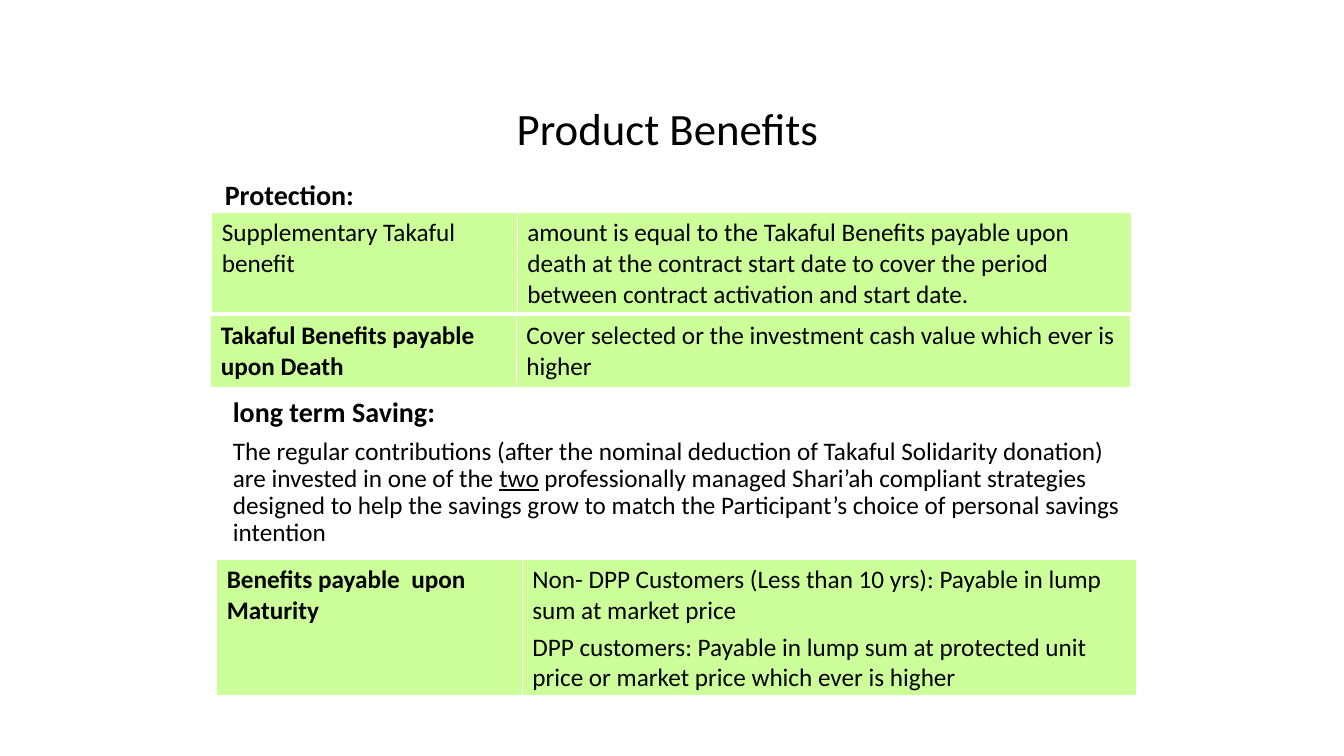
from lxml import etree
from pptx import Presentation
from pptx.dml import color
from pptx.enum import text
from pptx.oxml import ns
from pptx.util import Inches, Pt

BLACK, WHITE, LIME = "000000", "FFFFFF", "CCFF99"
BORDERS = {"lnL": 1, "lnR": 1, "lnT": 1, "lnB": 3}
COLUMNS = (3.03, 6.09)


def rgb(value):
    return color.RGBColor.from_string(value)


def set_attributes(target, values):
    for name, value in values.items():
        setattr(target, name, value)


def add_run(paragraph, wording, size=18, **extra):
    run = paragraph.add_run()
    run.text = wording
    set_attributes(run.font, {"name": "Calibri", "size": Pt(size), **extra})
    run.font.color.rgb = rgb(BLACK)


def add_words(slide, box, runs, inset=0.1, **paragraph_format):
    frame = slide.shapes.add_textbox(*map(Inches, box)).text_frame
    set_attributes(frame, {
        "word_wrap": True,
        "vertical_anchor": text.MSO_ANCHOR.TOP,
        "margin_left": Inches(inset),
    })
    paragraph = frame.paragraphs[0]
    set_attributes(paragraph, paragraph_format)
    for wording, font in runs:
        add_run(paragraph, wording, **font)


def add_borders(cell):
    properties = cell._tc.get_or_add_tcPr()
    for side, width in BORDERS.items():
        line = etree.SubElement(properties, ns.qn(f"a:{side}"), w=str(Pt(width)))
        fill = etree.SubElement(line, ns.qn("a:solidFill"))
        etree.SubElement(fill, ns.qn("a:srgbClr"), val=WHITE)


def fill_cell(cell, wordings, bold):
    add_borders(cell)
    cell.fill.solid()
    cell.fill.fore_color.rgb = rgb(LIME)
    frame = cell.text_frame
    for index, wording in enumerate(wordings):
        paragraph = frame.add_paragraph() if index else frame.paragraphs[0]
        if index:
            paragraph.space_before = Pt(4.3)
        add_run(paragraph, wording, bold=bold)


def add_benefit(slide, left, top, height, benefit, details, bold=True):
    box = map(Inches, (left, top, sum(COLUMNS), height))
    table = slide.shapes.add_table(1, len(COLUMNS), *box).table
    set_attributes(table, {"first_row": False, "horz_banding": False})
    for column, width in zip(table.columns, COLUMNS):
        column.width = Inches(width)
    fill_cell(table.cell(0, 0), [benefit], bold)
    fill_cell(table.cell(0, 1), details, False)


def add_heading(slide, left, top, wording, inset):
    add_words(slide, (left, top, 9.2, 0.41),
              [(wording, {"size": 20, "bold": True})], inset)


def main():
    deck = Presentation()
    set_attributes(deck, {"slide_width": Inches(13.33), "slide_height": Inches(7.5)})
    slide = deck.slides.add_slide(deck.slide_layouts[6])

    add_words(slide, (2.26, 0.95, 8.72, 0.54),
              [("Product Benefits", {"size": 32})],
              alignment=text.PP_ALIGN.CENTER)

    add_heading(slide, 2.02, 1.71, "Protection:", 0.21)
    add_benefit(slide, 2.1, 2.11, 1, "Supplementary Takaful benefit", [
        "amount is equal to the Takaful Benefits payable upon death at the "
        "contract start date to cover the period between contract activation "
        "and start date."], bold=False)
    add_benefit(slide, 2.09, 3.13, 0.73, "Takaful Benefits payable upon Death", [
        "Cover selected or the investment cash value which ever is higher"])

    add_heading(slide, 2.15, 3.86, "long term Saving:", 0.16)
    add_words(slide, (2.15, 4.3, 9.12, 1.19), [
        ("The regular contributions (after the nominal deduction of Takaful "
         "Solidarity donation) are invested in one of the ", {}),
        ("two", {"underline": True}),
        (" professionally managed Shari’ah compliant strategies designed to "
         "help the savings grow to match the Participant’s choice of personal "
         "savings intention", {}),
    ], 0.16, line_spacing=0.9)
    add_benefit(slide, 2.15, 5.55, 1.36, "Benefits payable  upon Maturity", [
        "Non- DPP Customers (Less than 10 yrs): Payable in lump sum at market price",
        "DPP customers: Payable in lump sum at protected unit price or market "
        "price which ever is higher"])

    deck.save("out.pptx")


if __name__ == "__main__":
    main()
